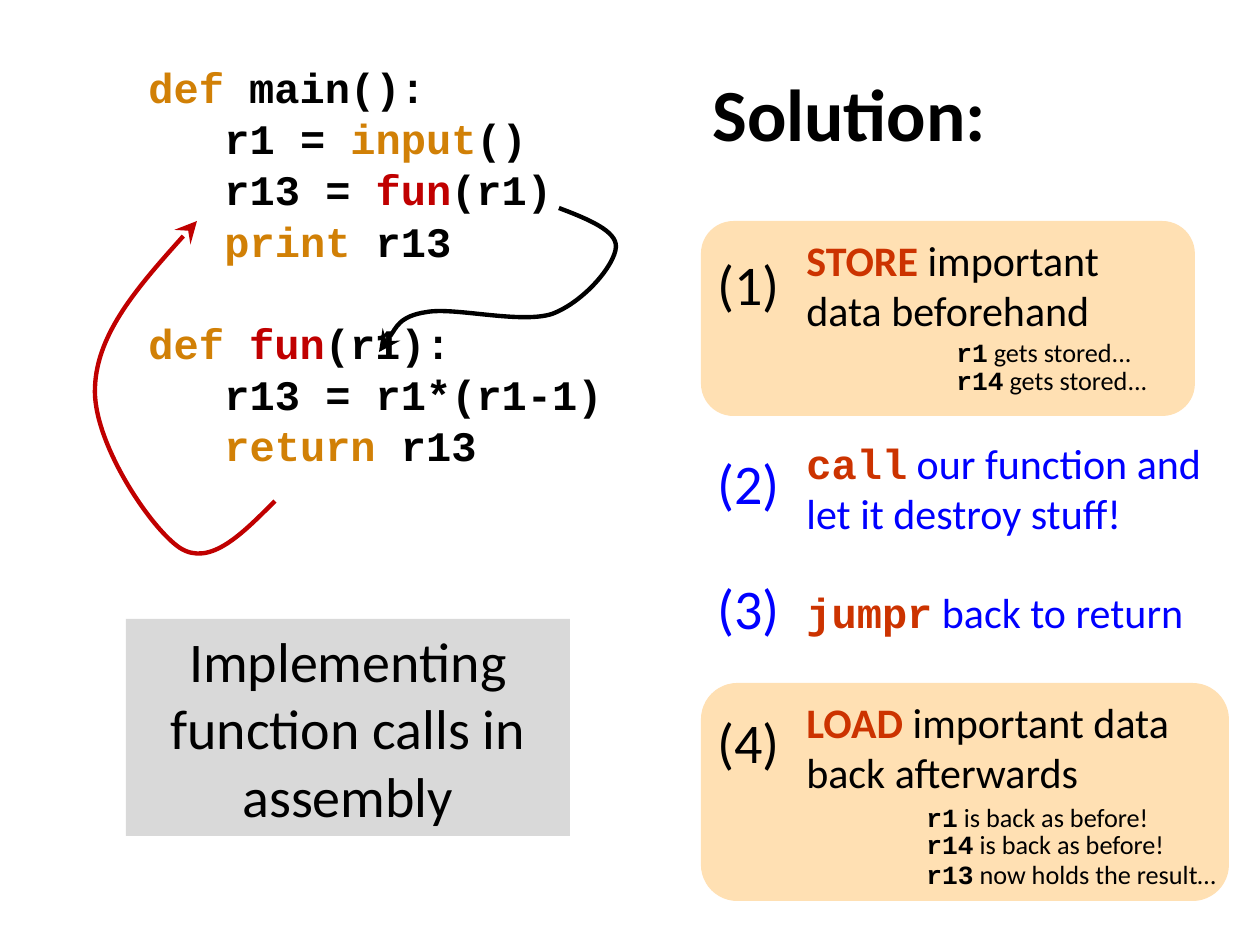
from lxml import etree
from pptx import Presentation
from pptx.dml.color import RGBColor
from pptx.enum import shapes, text
from pptx.oxml import ns
from pptx.util import Pt

SCALE = 914400 / 126
HUES = {"ink": "000000", "gold": "D18006", "red": "C00000", "rust": "CC3300",
        "blue": "0000FF", "sand": "FFE0B3", "grey": "D9D9D9"}
SANS, MONO = "Calibri", "Courier New"


def px(*nums):
    return [round(n * SCALE) for n in nums]


def hue(name):
    return RGBColor.from_string(HUES[name])


def write(para, runs, **base):
    for words, tint, extra in runs:
        run = para.add_run()
        run.text = words
        run.font.color.rgb = hue(tint)
        for key, value in {**base, **extra}.items():
            setattr(run.font, key, value)


def label(slide, box, runs, **base):
    frame = slide.shapes.add_textbox(*px(*box)).text_frame
    frame.word_wrap = True
    write(frame.paragraphs[0], runs, **base)


def panel(slide, kind, box, tint):
    shape = slide.shapes.add_shape(kind, *px(*box))
    shape.shadow.inherit = False
    shape.fill.solid()
    shape.fill.fore_color.rgb = hue(tint)
    shape.line.fill.background()
    return shape


def code(slide, box, lines):
    frame = slide.shapes.add_textbox(*px(*box)).text_frame
    frame.word_wrap = True
    for row, (depth, gap, runs) in enumerate(lines):
        para = frame.add_paragraph() if row else frame.paragraphs[0]
        form = {"line_spacing": 0.6, "space_before": Pt(gap)}
        for key, value in form.items():
            setattr(para, key, value)
        if depth:
            para._p.get_or_add_pPr().set("marL", str(px(76 * depth)[0]))
        write(para, [(words, tint, {}) for words, tint in runs],
              name=MONO, size=Pt(24), bold=True)


def step(slide, box, mark, drop, span, tint, key, face, rest, back=None, notes=()):
    left, top, wide, high = box
    if back:
        panel(slide, shapes.MSO_SHAPE.ROUNDED_RECTANGLE, box, back)
    label(slide, (left + 4, top + drop, 102, 81), [(mark, tint, {})],
          name=SANS, size=Pt(32))
    label(slide, (left + 93, top + 7, span, high - 14),
          [(key, "rust", {"name": face, "bold": True}), (rest, tint, {})],
          name=SANS, size=Pt(24), bold=False)
    for x, y, name, words in notes:
        label(slide, (left + x, top + y, wide - x + 18, 44),
              [(name, "ink", {"name": MONO, "bold": True}), (words, "ink", {})],
              name=SANS, size=Pt(15), bold=False)


def topic(slide, box, words):
    shape = panel(slide, shapes.MSO_SHAPE.RECTANGLE, box, "grey")
    para = shape.text_frame.paragraphs[0]
    para.alignment = text.PP_ALIGN.CENTER
    write(para, [(words, "ink", {})], name=SANS, size=Pt(32))


def curve(slide, origin, points, tint):
    spots = [(origin[0] + x, origin[1] + y) for x, y in points]
    build = slide.shapes.build_freeform(*spots[0], scale=SCALE)
    build.add_line_segments(spots[1:], close=False)
    shape = build.convert_to_shape()
    shape.shadow.inherit = False
    shape.fill.background()
    shape.line.color.rgb = hue(tint)
    shape.line.width = Pt(2.5)
    track = next(shape._element.iter(ns.qn("a:path")))
    legs = track.findall(ns.qn("a:lnTo"))
    for n in range(0, len(legs), 3):
        bend = etree.SubElement(track, ns.qn("a:cubicBezTo"))
        for leg in legs[n:n + 3]:
            bend.append(leg[0])
            track.remove(leg)
    etree.SubElement(shape.line._get_or_add_ln(), ns.qn("a:tailEnd"),
                     type="stealth", w="lg", len="lg")


def main():
    deck = Presentation()
    deck.slide_width, deck.slide_height = px(1260, 945)
    slide = deck.slides.add_slide(deck.slide_layouts[6])

    code(slide, (136, 73, 735, 440), [
        (0, 12, [("def", "gold"), (" main():", "ink")]),
        (1, 12, [("r1 = ", "ink"), ("input", "gold"), ("()", "ink")]),
        (1, 12, [("r13 = ", "ink"), ("fun", "red"), ("(r1)", "ink")]),
        (1, 12, [("print", "gold"), (" r13", "ink")]),
        (0, 41, [("def ", "gold"), ("fun", "red"), ("(r1):", "ink")]),
        (1, 12, [("r13 = r1*(r1-1)", "ink")]),
        (1, 12, [("return ", "gold"), ("r13", "ink")]),
    ])
    label(slide, (700, 62, 441, 102), [("Solution:", "ink", {})],
          name=SANS, size=Pt(42), bold=True)

    step(slide, (701, 221, 494, 195), "(1)", 22, 396, "ink", "STORE", SANS,
         " important data beforehand", "sand",
         [(243, 109, "r1", " gets stored..."),
          (243, 137, "r14", " gets stored...")])
    step(slide, (701, 424, 528, 129), "(2)", 18, 424, "blue", "call", MONO,
         " our function and let it destroy stuff!")
    step(slide, (701, 573, 528, 77), "(3)", -6, 424, "blue", "jumpr", MONO,
         " back to return")
    step(slide, (701, 683, 528, 218), "(4)", 18, 403, "ink", "LOAD", SANS,
         " important data back afterwards", "sand",
         [(213, 112, "r1", " is back as before!"),
          (213, 139, "r14", " is back as before!"),
          (213, 169, "r13", " now holds the result…")])

    topic(slide, (126, 619, 444, 217), "Implementing function calls in assembly")
    curve(slide, (95, 221), [
        (180, 280), (147, 313), (115, 346), (85, 327), (55, 307), (-3, 220),
        (0, 166), (2, 112), (52, 55), (102, 0)], "red")
    curve(slide, (379, 208), [
        (180, 0), (209, 11), (238, 23), (237, 39), (236, 57), (205, 94),
        (173, 106), (141, 116), (76, 99), (48, 104), (20, 108), (14, 127),
        (7, 133), (-1, 141), (-1, 142), (0, 144)], "ink")
    deck.save("out.pptx")


if __name__ == "__main__":
    main()
